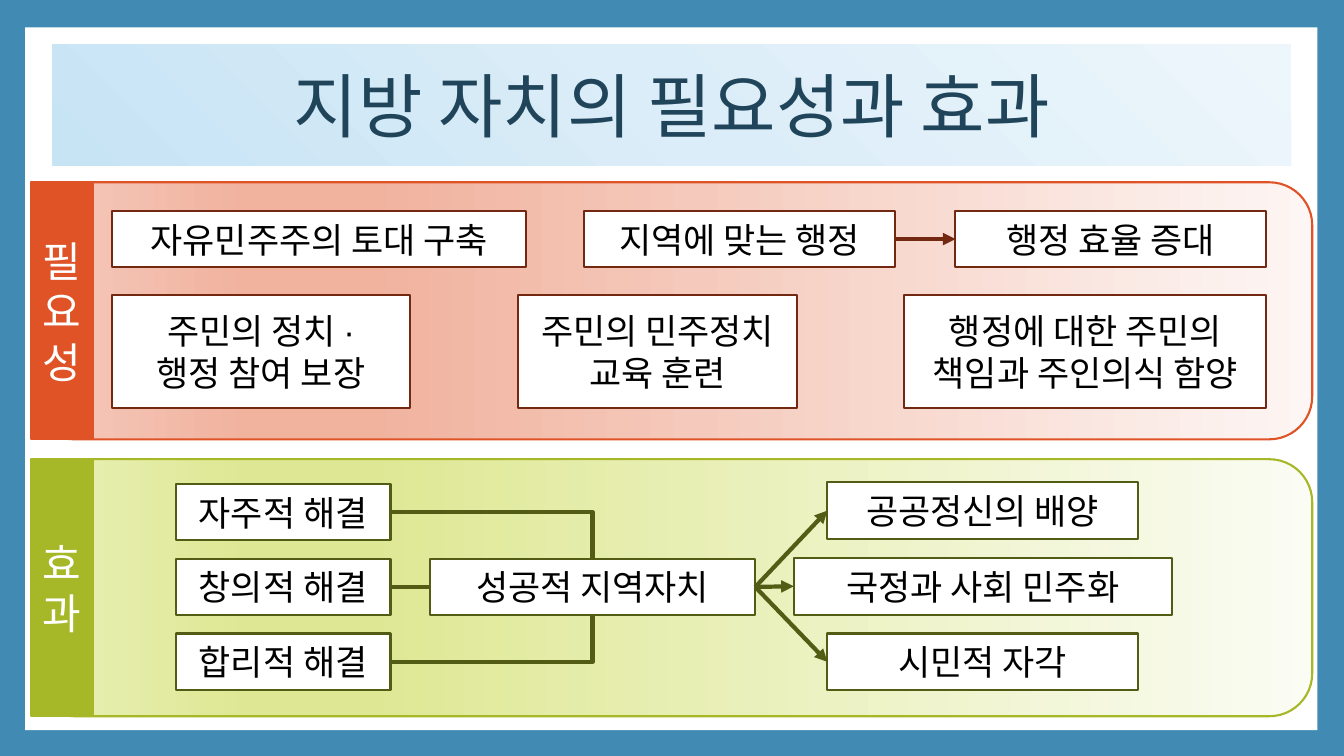
from lxml.etree import SubElement
from pptx import Presentation
from pptx.dml.color import RGBColor
from pptx.enum.shapes import MSO_CONNECTOR, MSO_SHAPE
from pptx.enum.text import MSO_ANCHOR, PP_ALIGN
from pptx.oxml import parse_xml
from pptx.oxml.ns import nsdecls, qn
from pptx.util import Pt

# Content: (text, left, width)
TITLE = "지방 자치의 필요성과 효과"
NEED_LABEL, EFFECT_LABEL = "필요성", "효과"
NEED_TOP_ROW = [
    ("자유민주주의 토대 구축", 80, 296),
    ("지역에 맞는 행정", 417.5, 222),
    ("행정 효율 증대", 682.5, 222),
]
NEED_BOTTOM_ROW = [
    ("주민의 정치 ·\v행정 참여 보장", 80, 213),
    ("주민의 민주정치 교육 훈련", 370, 199.5),
    ("행정에 대한 주민의 책임과 주인의식 함양", 646, 258.5),
]
SOLUTIONS = ["자주적 해결", "창의적 해결", "합리적 해결"]
SUCCESS = "성공적 지역자치"
OUTCOMES = [("공공정신의 배양", 222), ("국정과 사회 민주화", 270), ("시민적 자각", 222)]

# Colours
BLUE = RGBColor(0x41, 0x8A, 0xB3)
NAVY = RGBColor(0x20, 0x45, 0x5A)
WHITE = RGBColor(0xFF, 0xFF, 0xFF)
BLACK = RGBColor(0x00, 0x00, 0x00)
ORANGE = RGBColor(0xDF, 0x53, 0x27)
BROWN = RGBColor(0x72, 0x28, 0x11)
GREEN = RGBColor(0xA6, 0xB7, 0x27)
OLIVE = RGBColor(0x53, 0x5C, 0x14)
TITLE_STOPS = [(0, "C7E4F5"), (50, "DBEDF8"), (100, "EDF6FB")]
ORANGE_STOPS = [(0, "FDF6F4"), (74, "F1B29E"), (83, "F1B29E"), (100, "F5CBBE")]
GREEN_STOPS = [(0, "FBFCF3"), (74, "DEE894"), (83, "DEE894"), (100, "E9F0B8")]
LINEAR = '<a:lin ang="10800000" scaled="0"/>'
RADIAL = '<a:path path="circle"><a:fillToRect t="100000" r="100000"/></a:path>'

# Layout
PANEL_LEFT, PANEL_WIDTH, PANEL_HEIGHT, LABEL_WIDTH = 22.3, 915, 183.6, 44
BOX_HEIGHT, TALL_BOX_HEIGHT = 40.5, 80.5
OUTCOME_CENTER = 702
TOP, LEFT, BOTTOM, RIGHT = range(4)

deck = Presentation()
deck.slide_width, deck.slide_height = Pt(960), Pt(540)
page = deck.slides.add_slide(deck.slide_layouts[6])
page.background.fill.solid()
page.background.fill.fore_color.rgb = BLUE


def add_block(left, top, width, height, fill=None, line=None, kind=MSO_SHAPE.RECTANGLE):
    block = page.shapes.add_shape(kind, Pt(left), Pt(top), Pt(width), Pt(height))
    block.shadow.inherit = False
    if fill is not None:
        block.fill.solid()
        block.fill.fore_color.rgb = fill
    if line is None:
        block.line.fill.background()
    else:
        block.line.color.rgb = line
        block.line.width = Pt(1.5)
    return block


def set_gradient(block, stops, direction):
    stop_xml = "".join(
        f'<a:gs pos="{position * 1000}"><a:srgbClr val="{color}"/></a:gs>'
        for position, color in stops)
    gradient = parse_xml(f'<a:gradFill {nsdecls("a")} rotWithShape="1">'
                         f'<a:gsLst>{stop_xml}</a:gsLst>{direction}</a:gradFill>')
    block._element.spPr.find(qn("a:prstGeom")).addnext(gradient)


def set_text(block, text, size, color, font="Arial"):
    frame = block.text_frame
    frame.text = text
    frame.word_wrap = True
    frame.vertical_anchor = MSO_ANCHOR.MIDDLE
    para = frame.paragraphs[0]
    para.alignment = PP_ALIGN.CENTER
    for span in para.runs:
        span.font.size = Pt(size)
        span.font.name = font
        span.font.color.rgb = color


def add_panel(top, label, color, stops):
    panel = add_block(PANEL_LEFT, top, PANEL_WIDTH, PANEL_HEIGHT,
                      line=color, kind=MSO_SHAPE.ROUNDED_RECTANGLE)
    set_gradient(panel, stops, LINEAR)
    strip = add_block(PANEL_LEFT, top, LABEL_WIDTH, PANEL_HEIGHT, color, color)
    set_text(strip, label, 30, WHITE, "Cabin")


def add_box(text, left, top, width, line, height=BOX_HEIGHT):
    box = add_block(left, top, width, height, WHITE, line)
    set_text(box, text, 25, BLACK)
    return box


def join(start, start_side, end, end_side, color, bent=False, arrow=False):
    kind = MSO_CONNECTOR.ELBOW if bent else MSO_CONNECTOR.STRAIGHT
    link = page.shapes.add_connector(kind, 0, 0, 0, 0)
    link.begin_connect(start, start_side)
    link.end_connect(end, end_side)
    link.line.color.rgb = color
    link.line.width = Pt(3)
    properties = link._element.spPr
    if bent:
        properties.find(qn("a:prstGeom")).set("prst", "bentConnector2")
    if arrow:
        SubElement(properties.find(qn("a:ln")), qn("a:tailEnd"), type="triangle")
    SubElement(properties, qn("a:effectLst"))


# Frame and title
add_block(18, 19.5, 923, 502, WHITE)
title = add_block(37.5, 31.5, 885, 87)
set_gradient(title, TITLE_STOPS, RADIAL)
set_text(title, TITLE, 50, NAVY)

# Need panel
add_panel(130.2, NEED_LABEL, ORANGE, ORANGE_STOPS)
top_boxes = [add_box(text, left, 150.5, width, BROWN) for text, left, width in NEED_TOP_ROW]
for text, left, width in NEED_BOTTOM_ROW:
    add_box(text, left, 211, width, BROWN, TALL_BOX_HEIGHT)
join(top_boxes[1], RIGHT, top_boxes[2], LEFT, BROWN, arrow=True)

# Effect panel
add_panel(328, EFFECT_LABEL, GREEN, GREEN_STOPS)
success = add_box(SUCCESS, 307, 399, 232.5, OLIVE)
solutions = [add_box(text, 125.5, 345.5 + 53.5 * row, 153.5, OLIVE)
             for row, text in enumerate(SOLUTIONS)]
outcomes = [add_box(text, OUTCOME_CENTER - width / 2, 344.5 + 54 * row, width, OLIVE)
            for row, (text, width) in enumerate(OUTCOMES)]
for solution, side in zip(solutions, (TOP, LEFT, BOTTOM)):
    join(solution, RIGHT, success, side, OLIVE, bent=side != LEFT)
for outcome in outcomes:
    join(success, RIGHT, outcome, LEFT, OLIVE, arrow=True)

deck.save("out.pptx")
